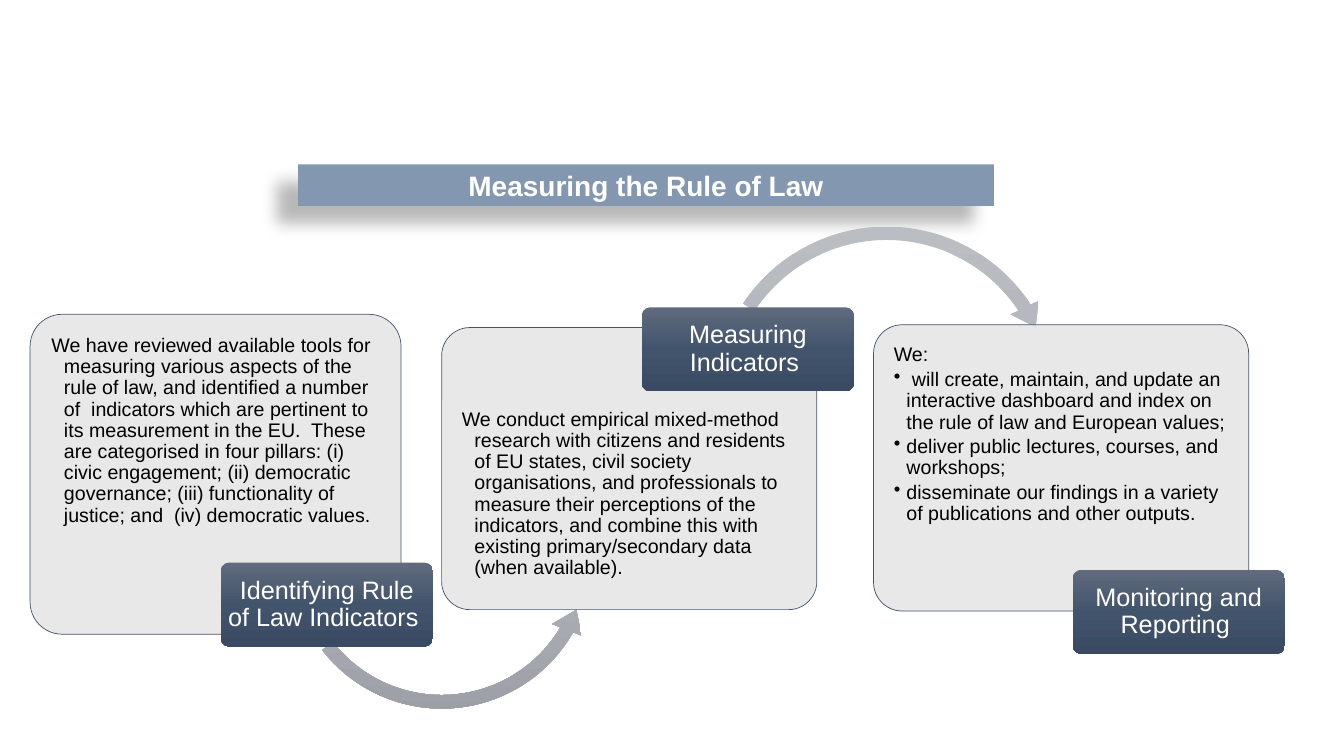
from lxml import etree
from pptx import Presentation
from pptx.dml.color import RGBColor
from pptx.enum import shapes, text
from pptx.oxml import ns
from pptx.util import Pt

TITLE = "Measuring the Rule of Law"
TITLE_BOX = (213, 117.5, 497, 29.5)
LABEL_SIZE = (151.5, 60)
FONT = "Arial"
ARROW_STOPS = [(0, "BABDC2"), (50, "B0B3BA"), (100, "9C9FA6")]
LABEL_STOPS = [(0, "606B7D"), (50, "42546C"), (100, "394A62")]

# Each step: card box, margin above its text, paragraphs, label and its corner, arrow to the next step
STEPS = [
    {"card": (21.5, 224.5, 265, 228.5), "top": 8.5,
     "intro": "We have reviewed available tools for measuring various aspects of the rule of law, "
              "and identified a number of  indicators which are pertinent to its measurement in "
              "the EU.  These are categorised in four pillars: (i) civic engagement; (ii) "
              "democratic governance; (iii) functionality of justice; and  (iv) democratic values.",
     "bullets": [],
     "label": "Identifying Rule of Law Indicators ", "corner": (157.7, 401.8),
     "arrow": (shapes.MSO_SHAPE.LEFT_CIRCULAR_ARROW, (201, 283.5, 229, 229),
               (0.042, 5.302, 18.081, 85.268, 0.049))},
    {"card": (315.5, 234, 268, 201.5), "top": 52.5,
     "intro": "We conduct empirical mixed-method research with citizens and residents of EU "
              "states, civil society organisations, and professionals to measure their "
              "perceptions of the indicators, and combine this with existing primary/secondary "
              "data (when available).",
     "bullets": [],
     "label": "Measuring Indicators ", "corner": (458.5, 219.5),
     "arrow": (shapes.MSO_SHAPE.CIRCULAR_ARROW, (504, 155.5, 258.5, 258.5),
               (0.037, 4.651, 195.97, 128.131, 0.043))},
    {"card": (624, 232, 268, 204.5), "top": 8.5,
     "intro": "We:",
     "bullets": [" will create, maintain, and update an interactive dashboard and index on the "
                 "rule of law and European values;",
                 "deliver public lectures, courses, and workshops;",
                 "disseminate our findings in a variety of publications and other outputs."],
     "label": "Monitoring and Reporting ", "corner": (766.2, 407),
     "arrow": None},
]


def color(value):
    return RGBColor.from_string(value)


def add_element(parent, tag, **attributes):
    return etree.SubElement(parent, ns.qn(tag), {name: str(v) for name, v in attributes.items()})


def place(shape, box):
    shape.left, shape.top, shape.width, shape.height = map(Pt, box)


def set_margins(frame, side, top):
    frame.word_wrap = True
    frame.margin_left = frame.margin_right = Pt(side)
    frame.margin_top, frame.margin_bottom = Pt(top), Pt(side)


def add_run(paragraph, words, size, font_color, bold=False):
    run = paragraph.add_run()
    run.text = words
    run.font.name, run.font.size, run.font.bold = FONT, Pt(size), bold
    run.font.color.rgb = color(font_color)


def add_plain_shape(slide, kind, box):
    shape = slide.shapes.add_shape(kind, *map(Pt, box))
    shape.shadow.inherit = False
    shape.line.fill.background()
    return shape


def fill_downwards(shape, stops):
    """Fill the shape with a gradient running from top to bottom."""
    shape.fill.gradient()
    shape.fill.gradient_angle = 270
    stop_list = shape._element.spPr.find(ns.qn("a:gradFill")).find(ns.qn("a:gsLst"))
    for stop in list(stop_list):
        stop_list.remove(stop)
    for percent, value in stops:
        stop = add_element(stop_list, "a:gs", pos=percent * 1000)
        add_element(stop, "a:srgbClr", val=value)


def add_title(slide):
    title = slide.shapes.title
    place(title, TITLE_BOX)
    properties = title._element.spPr
    geometry = add_element(properties, "a:prstGeom", prst="roundRect")
    add_element(geometry, "a:avLst")
    title.fill.solid()
    title.fill.fore_color.rgb = color("8497B0")
    effects = add_element(properties, "a:effectLst")
    shadow = add_element(effects, "a:outerShdw", blurRad=Pt(11.8), dist=Pt(19.7),
                         dir=141 * 60000, algn="ctr", rotWithShape=0)
    add_element(add_element(shadow, "a:srgbClr", val="000000"), "a:alpha", val=28000)
    frame = title.text_frame
    set_margins(frame, 3, 3)
    frame.auto_size = text.MSO_AUTO_SIZE.NONE
    frame.vertical_anchor = text.MSO_ANCHOR.MIDDLE
    paragraph = frame.paragraphs[0]
    paragraph.alignment = text.PP_ALIGN.CENTER
    add_run(paragraph, TITLE, 20, "FFFFFF", bold=True)


def add_card(slide, step):
    card = add_plain_shape(slide, shapes.MSO_SHAPE.ROUNDED_RECTANGLE, step["card"])
    card.adjustments[0] = 0.1
    card.fill.solid()
    card.fill.fore_color.rgb = color("E7E6E6")
    fill = card._element.spPr.find(ns.qn("a:solidFill"))
    add_element(fill[0], "a:alpha", val=90000)
    card.line.color.rgb = color("44546A")
    card.line.width = Pt(0.5)
    frame = card.text_frame
    set_margins(frame, 8.5, step["top"])
    frame.vertical_anchor = text.MSO_ANCHOR.TOP
    for index, words in enumerate([step["intro"], *step["bullets"]]):
        paragraph = frame.add_paragraph() if index else frame.paragraphs[0]
        paragraph.alignment = text.PP_ALIGN.LEFT
        paragraph.line_spacing = 0.9
        paragraph.space_after = Pt(2.5)
        properties = paragraph._p.get_or_add_pPr()
        properties.set("marL", str(Pt(9)))
        properties.set("indent", str(-Pt(9)))
        if index:
            add_element(properties, "a:buChar", char="•")
        add_run(paragraph, words, 14, "000000")


def add_arrow(slide, kind, box, adjustments):
    arrow = add_plain_shape(slide, kind, box)
    for index, value in enumerate(adjustments):
        arrow.adjustments[index] = value
    fill_downwards(arrow, ARROW_STOPS)


def add_label(slide, words, corner):
    label = add_plain_shape(slide, shapes.MSO_SHAPE.ROUNDED_RECTANGLE, corner + LABEL_SIZE)
    label.adjustments[0] = 0.1
    fill_downwards(label, LABEL_STOPS)
    frame = label.text_frame
    set_margins(frame, 2.5, 2.5)
    frame.vertical_anchor = text.MSO_ANCHOR.MIDDLE
    paragraph = frame.paragraphs[0]
    paragraph.alignment = text.PP_ALIGN.CENTER
    paragraph.line_spacing = 0.9
    add_run(paragraph, words, 18, "FFFFFF")


def main():
    presentation = Presentation()
    presentation.slide_width, presentation.slide_height = Pt(960), Pt(540)
    slide = presentation.slides.add_slide(presentation.slide_layouts.get_by_name("Title Only"))
    add_title(slide)
    for step in STEPS:
        add_card(slide, step)
        if step["arrow"]:
            add_arrow(slide, *step["arrow"])
        add_label(slide, step["label"], step["corner"])
    presentation.save("out.pptx")


if __name__ == "__main__":
    main()
